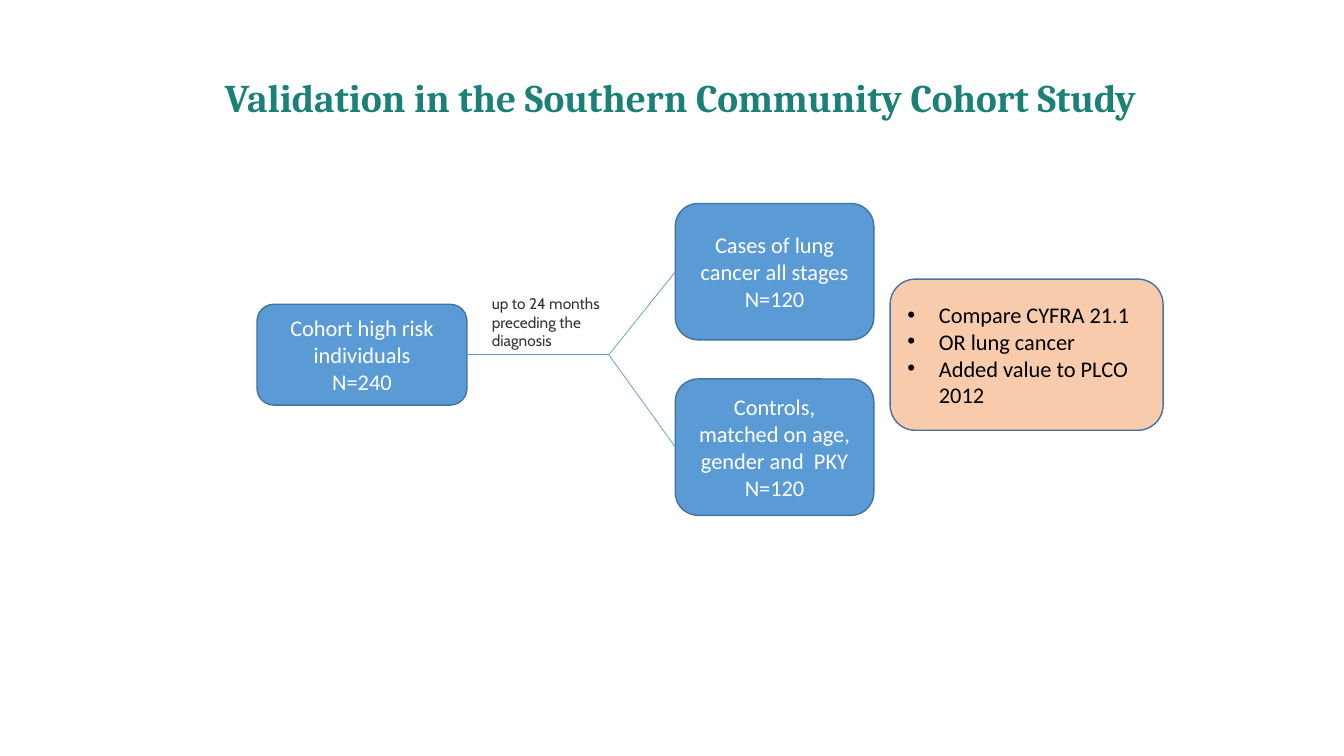
from lxml import etree
from pptx import Presentation
from pptx.dml.color import RGBColor
from pptx.enum.shapes import MSO_CONNECTOR, MSO_SHAPE
from pptx.enum.text import MSO_ANCHOR, MSO_AUTO_SIZE, PP_ALIGN
from pptx.oxml.ns import qn
from pptx.util import Pt

ROUNDED = MSO_SHAPE.ROUNDED_RECTANGLE
STRAIGHT = MSO_CONNECTOR.STRAIGHT
MIDDLE, TOP = MSO_ANCHOR.MIDDLE, MSO_ANCHOR.TOP
CENTER, LEFT = PP_ALIGN.CENTER, PP_ALIGN.LEFT
NO_FIT, GROW = MSO_AUTO_SIZE.NONE, MSO_AUTO_SIZE.SHAPE_TO_FIT_TEXT
LEFT_SIDE, RIGHT_SIDE = 1, 3

COLORS = {
    "title": "1B8176",
    "group": "5B9BD5",
    "outcome": "F8CBAD",
    "outline": "43739E",
    "white": "FFFFFF",
    "black": "000000",
    "note": "333333",
}
AXIS_Y = 253.4
FORK_X = 434.9
BULLET_INDENT = 22.5
ARM_LEFT, ARM_TOP, ARM_WIDTH, ARM_HEIGHT, ARM_STEP = 482.4, 145.4, 141.8, 97.4, 125.3


def color(key):
    return RGBColor.from_string(COLORS[key])


def add_bullet(paragraph):
    properties = paragraph._p.get_or_add_pPr()
    properties.set("marL", str(Pt(BULLET_INDENT)))
    properties.set("indent", str(-Pt(BULLET_INDENT)))
    etree.SubElement(properties, qn("a:buFont"), typeface="Arial")
    etree.SubElement(properties, qn("a:buChar"), char="•")


def write(frame, lines, size=16, font="Calibri", ink="white", bold=False,
          align=CENTER, anchor=MIDDLE, fit=NO_FIT, bullets=False):
    frame.word_wrap = True
    frame.auto_size = fit
    frame.vertical_anchor = anchor
    for index, line in enumerate(lines):
        paragraph = frame.add_paragraph() if index else frame.paragraphs[0]
        paragraph.alignment = align
        run = paragraph.add_run()
        run.text = line
        run.font.size = Pt(size)
        run.font.name = font
        run.font.bold = bold
        run.font.color.rgb = color(ink)
        if bullets:
            add_bullet(paragraph)


def add_title(slide, wording):
    title = slide.shapes.title
    title.left, title.top, title.width, title.height = Pt(132), Pt(24), Pt(708), Pt(90)
    write(title.text_frame, [wording], size=28, font="Cambria", ink="title", bold=True)


def add_box(slide, left, top, width, height, lines, fill="group", **text_format):
    box = slide.shapes.add_shape(ROUNDED, Pt(left), Pt(top), Pt(width), Pt(height))
    box.shadow.inherit = False
    box.fill.solid()
    box.fill.fore_color.rgb = color(fill)
    box.line.color.rgb = color("outline")
    box.line.width = Pt(1)
    write(box.text_frame, lines, **text_format)
    return box


def add_branch(slide, start, end):
    branch = slide.shapes.add_connector(STRAIGHT, *map(Pt, start + end))
    branch.line.color.rgb = color("group")
    branch.line.width = Pt(0.5)
    etree.SubElement(branch._element.spPr, qn("a:effectLst"))
    return branch


def add_note(slide, left, top, width, height, wording):
    note = slide.shapes.add_textbox(Pt(left), Pt(top), Pt(width), Pt(height))
    write(note.text_frame, [wording], size=11, font="Cabin", ink="note",
          align=LEFT, anchor=TOP, fit=GROW)


def main():
    presentation = Presentation()
    presentation.slide_width, presentation.slide_height = Pt(960), Pt(540)
    slide = presentation.slides.add_slide(presentation.slide_layouts[5])
    add_title(slide, "Validation in the Southern Community Cohort Study")

    cohort = add_box(slide, 183.6, AXIS_Y - 36, 150, 72,
                     ["Cohort high risk individuals", "N=240"])
    arm_texts = [
        "Cases of lung cancer all stages",
        "Controls, matched on age, gender and  PKY",
    ]
    arms = [
        add_box(slide, ARM_LEFT, ARM_TOP + row * ARM_STEP, ARM_WIDTH, ARM_HEIGHT,
                [wording, "N=120"])
        for row, wording in enumerate(arm_texts)
    ]
    add_box(slide, 635.8, AXIS_Y - 54, 195, 108,
            ["Compare CYFRA 21.1", "OR lung cancer", "Added value to PLCO 2012"],
            fill="outcome", ink="black", align=LEFT, bullets=True)

    fork = (FORK_X, AXIS_Y)
    stem = add_branch(slide, (333.6, AXIS_Y), fork)
    stem.begin_connect(cohort, RIGHT_SIDE)
    for arm in arms:
        branch = add_branch(slide, fork, (ARM_LEFT, AXIS_Y))
        branch.end_connect(arm, LEFT_SIDE)

    add_note(slide, 344.2, 206.6, 95, 47.5, "up to 24 months preceding the diagnosis")
    presentation.save("out.pptx")


if __name__ == "__main__":
    main()
